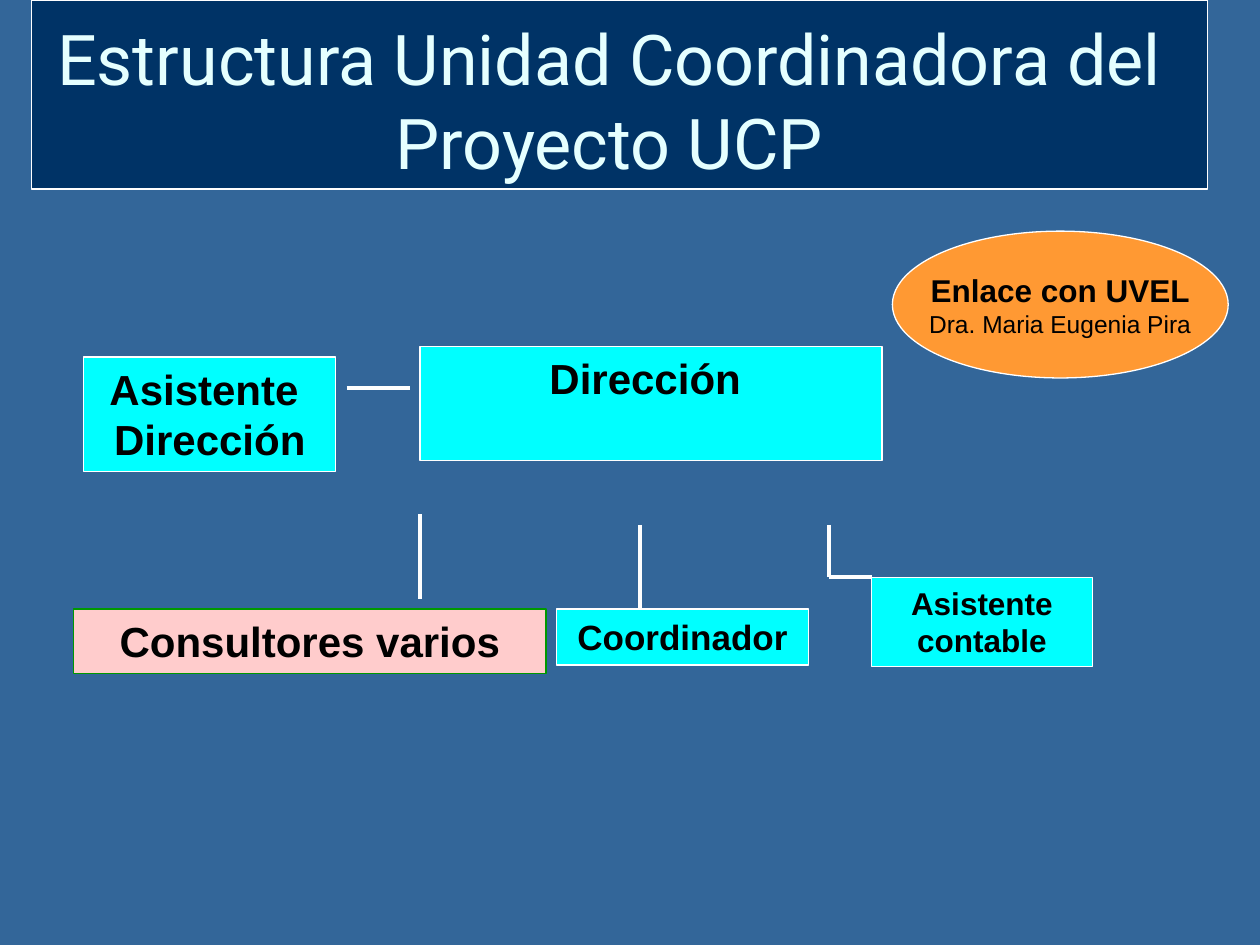
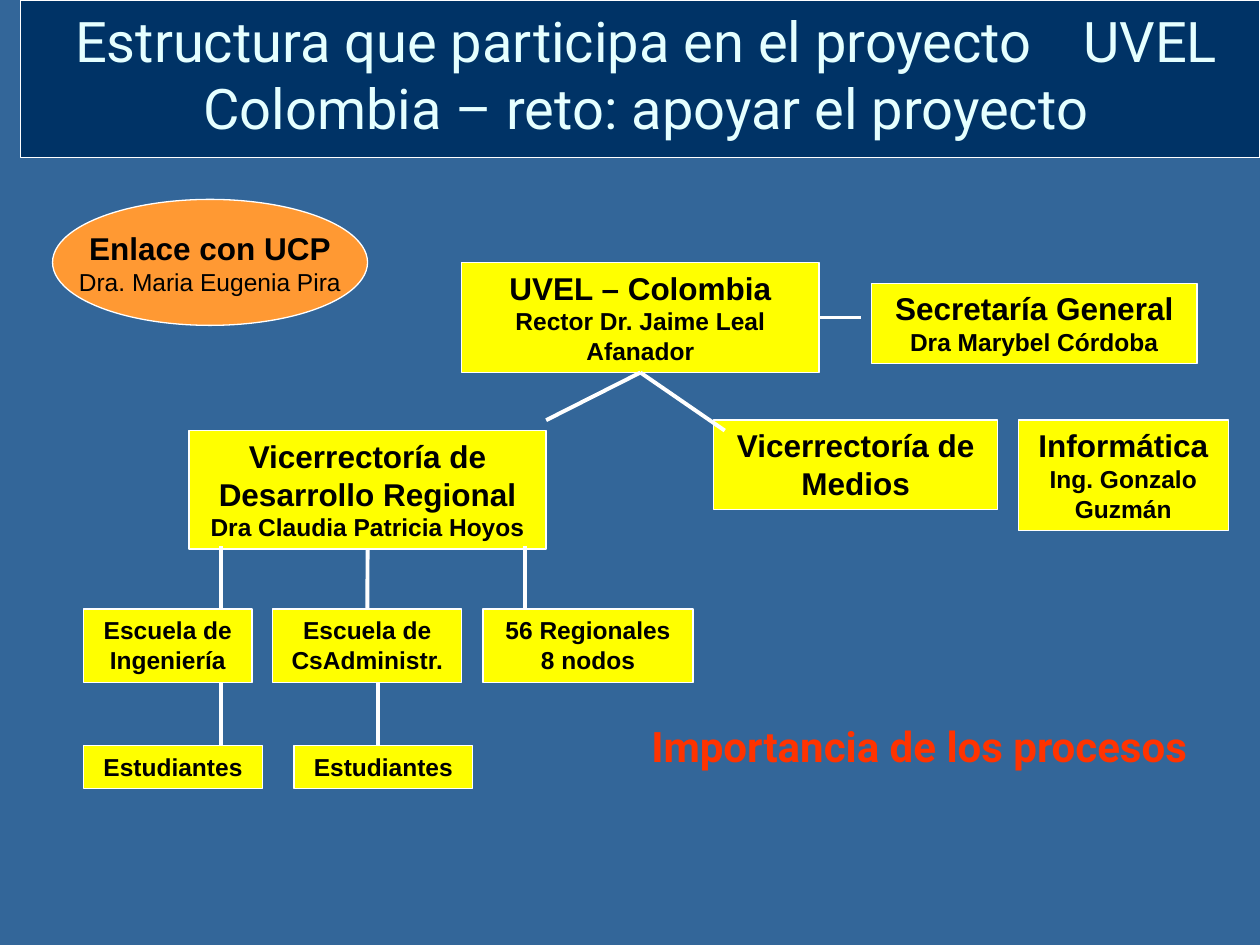
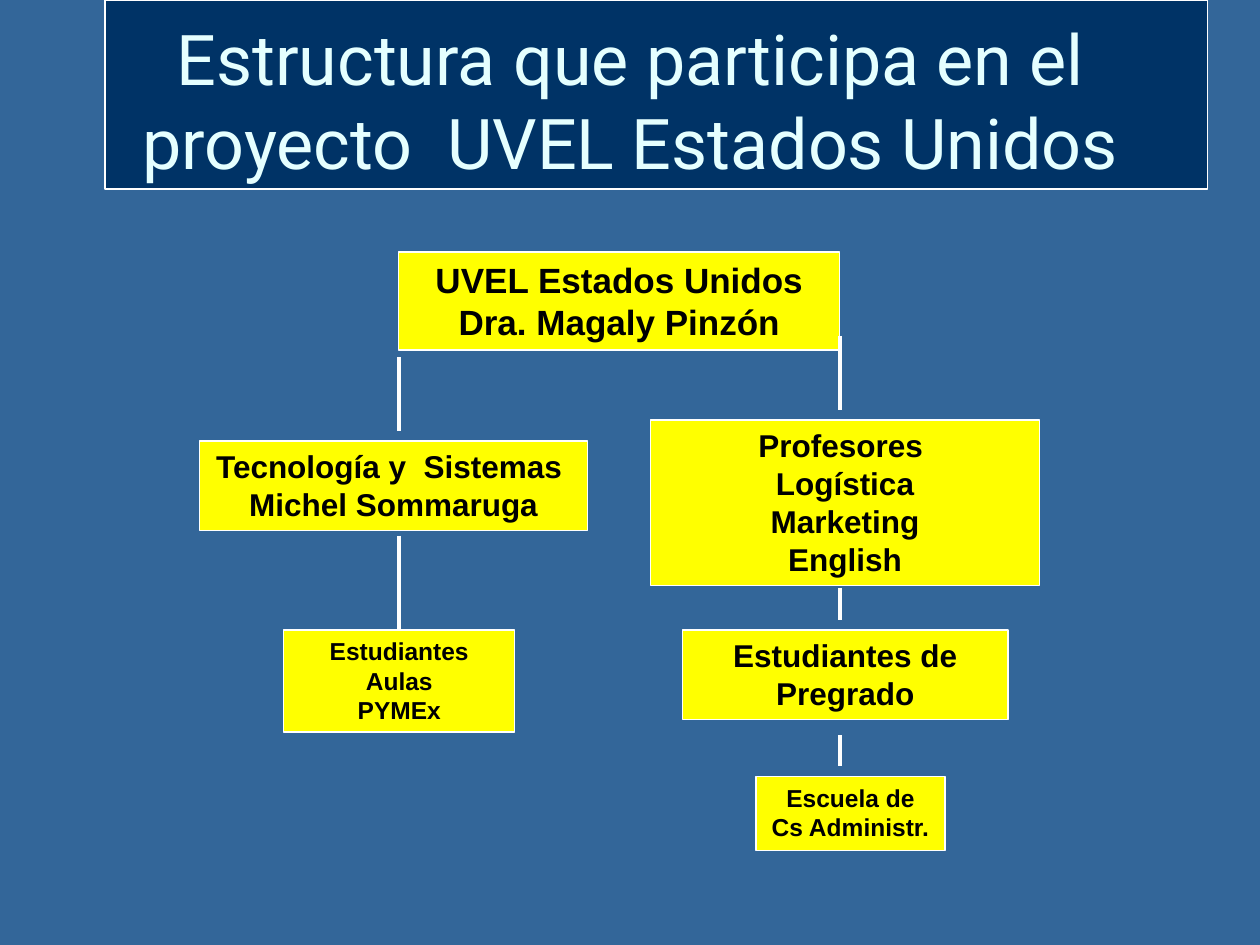
from lxml.etree import SubElement
from pptx import Presentation
from pptx.dml.color import RGBColor
from pptx.enum.shapes import MSO_CONNECTOR, MSO_SHAPE
from pptx.enum.text import MSO_ANCHOR, MSO_AUTO_SIZE, PP_ALIGN
from pptx.oxml.ns import qn
from pptx.util import Cm, Pt

BLUE = RGBColor(0x33, 0x66, 0x99)
NAVY = RGBColor(0x00, 0x33, 0x66)
ICE = RGBColor(0xE5, 0xFF, 0xFF)
WHITE = RGBColor(0xFF, 0xFF, 0xFF)
BLACK = RGBColor(0x00, 0x00, 0x00)
CYAN = RGBColor(0x00, 0xFF, 0xFF)
YELLOW = RGBColor(0xFF, 0xFF, 0x00)
ORANGE = RGBColor(0xFF, 0x99, 0x33)
PINK = RGBColor(0xFF, 0xCC, 0xCC)
GREEN = RGBColor(0x00, 0x99, 0x00)
RED = RGBColor(0xFF, 0x33, 0x00)
TITLE_FONT = "Roboto"
BODY_FONT = "Arial"
TOP, BOTTOM, RIGHT = 0, 2, 3


def add_block(slide, place, fill, heading="", size=18, detail="", kind=MSO_SHAPE.RECTANGLE):
    """Add a filled shape with a bold heading and, below it, a 14 pt detail line."""
    block = slide.shapes.add_shape(kind, *map(Cm, place))
    block.shadow.inherit = False
    block.fill.solid()
    block.fill.fore_color.rgb = fill
    block.line.color.rgb = WHITE
    block.line.width = Pt(0.75)
    is_oval = kind == MSO_SHAPE.OVAL
    frame = block.text_frame
    frame.word_wrap = not is_oval
    frame.vertical_anchor = MSO_ANCHOR.MIDDLE if is_oval else MSO_ANCHOR.TOP
    frame.text = f"{heading}\n{detail}" if detail else heading
    for paragraph in frame.paragraphs:
        paragraph.alignment = PP_ALIGN.CENTER
        for run in paragraph.runs:
            is_detail = run.text == detail
            run.font.name = BODY_FONT
            run.font.size = Pt(14 if is_detail else size)
            run.font.bold = not (is_detail and is_oval)
            run.font.color.rgb = BLACK
    return block


def add_link(slide, *ends):
    link = slide.shapes.add_connector(MSO_CONNECTOR.STRAIGHT, *map(Cm, ends))
    link.line.color.rgb = WHITE
    link.line.width = Pt(2.25)
    SubElement(link._element.spPr, qn("a:effectLst"))
    return link


presentation = Presentation()
presentation.slide_width = Cm(25.4)
presentation.slide_height = Cm(19.05)
background = presentation.slide_master.background.fill
background.solid()
background.fore_color.rgb = BLUE

# Titles: text, size, title place, band place
headers = [
    ("Estructura Unidad Coordinadora del Proyecto UCP", 40,
     (0, 0.64, 24.56, 2.74), (0.64, 0, 23.7, 3.81)),
    ("Estructura que participa en el proyecto\tUVEL Colombia – reto: apoyar el proyecto", 32,
     (0.64, 0.21, 24.77, 2.54), (0.42, 0, 24.98, 3.18)),
    ("Estructura que participa en el proyecto  UVEL Estados Unidos", 40,
     (0.64, 0.64, 24.13, 2.74), (2.12, 0, 22.23, 3.81)),
]
for text, size, title_place, band_place in headers:
    slide = presentation.slides.add_slide(presentation.slide_layouts[5])
    band = add_block(slide, band_place, NAVY)
    title = slide.shapes.title
    title._element.addprevious(band._element)
    title.left, title.top, title.width, title.height = map(Cm, title_place)
    title.text_frame.text = text
    title.text_frame.word_wrap = True
    title.text_frame.auto_size = MSO_AUTO_SIZE.NONE
    title.text_frame.vertical_anchor = MSO_ANCHOR.MIDDLE
    heading = title.text_frame.paragraphs[0]
    heading.alignment = PP_ALIGN.CENTER
    font = heading.runs[0].font
    font.name, font.size, font.color.rgb = TITLE_FONT, Pt(size), ICE

ucp, colombia, united_states = presentation.slides

# Coordinating unit
for place, text, size in [
    ((8.47, 6.98, 9.31, 2.31), "Dirección ", 24),
    ((11.22, 12.28, 5.08, 1.13), "Coordinador", 20),
    ((1.69, 7.2, 5.08, 2.31), "Asistente \nDirección", 24),
    ((17.57, 11.64, 4.45, 1.8), "Asistente contable", 18),
]:
    add_block(ucp, place, CYAN, text, size)
consultants = add_block(ucp, (1.48, 12.28, 9.53, 1.3), PINK, "Consultores varios", 24)
consultants.line.color.rgb = GREEN
add_block(ucp, (17.99, 4.66, 6.77, 2.96), ORANGE, "Enlace con UVEL",
          detail="Dra. Maria Eugenia Pira", kind=MSO_SHAPE.OVAL)
for ends in [
    (12.91, 10.58, 12.91, 12.28),
    (16.72, 10.58, 16.72, 11.64),
    (16.72, 11.64, 17.57, 11.64),
    (6.99, 7.83, 8.26, 7.83),
    (8.47, 10.37, 8.47, 12.07),
]:
    add_link(ucp, *ends)

# Colombia
rectorate = add_block(colombia, (9.31, 5.29, 7.2, 2.22), YELLOW, "UVEL – Colombia",
                      detail="Rector Dr. Jaime Leal Afanador")
regional = add_block(colombia, (3.81, 8.68, 7.2, 2.39), YELLOW,
                     "Vicerrectoría de Desarrollo Regional", detail="Dra Claudia Patricia Hoyos")
add_block(colombia, (17.57, 5.71, 6.56, 1.62), YELLOW, "Secretaría General",
          detail="Dra Marybel Córdoba")
add_block(colombia, (14.39, 8.47, 5.72, 1.8), YELLOW, "Vicerrectoría de Medios")
add_block(colombia, (20.53, 8.47, 4.23, 2.23), YELLOW, "Informática",
          detail="Ing. Gonzalo Guzmán")
add_block(colombia, (1.69, 12.28, 3.39, 1.48), YELLOW, "Escuela de Ingeniería", 14)
administration = add_block(colombia, (5.5, 12.28, 3.81, 1.48), YELLOW,
                           "Escuela de CsAdministr.", 14)
add_block(colombia, (9.74, 12.28, 4.23, 1.48), YELLOW, "56 Regionales\n8 nodos", 14)
for left in (1.69, 5.93):
    add_block(colombia, (left, 15.03, 3.6, 0.86), YELLOW, "Estudiantes", 14)
add_block(colombia, (1.06, 4.02, 6.35, 2.54), ORANGE, "Enlace con UCP",
          detail="Dra. Maria Eugenia Pira", kind=MSO_SHAPE.OVAL)

add_link(colombia, 16.51, 6.4, 17.36, 6.4).begin_connect(rectorate, RIGHT)
for end_x, end_y in [(11.01, 8.47), (14.61, 8.68)]:
    add_link(colombia, 12.91, 7.51, end_x, end_y).begin_connect(rectorate, BOTTOM)
for x in (4.45, 10.58):
    add_link(colombia, x, 11.01, x, 12.28)
school_link = add_link(colombia, 7.41, 11.07, 7.41, 12.28)
school_link.begin_connect(regional, BOTTOM)
school_link.end_connect(administration, TOP)
for x in (4.45, 7.62):
    add_link(colombia, x, 13.76, x, 15.03)

motto = colombia.shapes.add_textbox(Cm(12.88), Cm(14.39), Cm(12.52), Cm(1.27)).text_frame
motto.word_wrap = False
motto.text = "Importancia de los procesos"
font = motto.paragraphs[0].runs[0].font
font.name, font.size, font.bold, font.color.rgb = TITLE_FONT, Pt(24), True, RED

# United States
for place, text, size in [
    ((8.04, 5.08, 8.89, 1.98), "UVEL Estados Unidos\nDra. Magaly Pinzón", 20),
    ((4.02, 8.89, 7.83, 1.8), "Tecnología y  Sistemas \nMichel Sommaruga", 18),
    ((13.12, 8.47, 7.83, 3.33), "Profesores \nLogística\nMarketing\nEnglish", 18),
    ((13.76, 12.7, 6.56, 1.8), "Estudiantes de\nPregrado", 18),
    ((15.24, 15.66, 3.81, 1.48), "Escuela de Cs Administr.", 14),
]:
    add_block(united_states, place, YELLOW, text, size)
classrooms = add_block(united_states, (5.72, 12.7, 4.66, 2.06), YELLOW,
                       "Estudiantes\nAulas\nPYMEx", 14)
for x, start, end in [
    (8.04, 7.2, 8.68),
    (16.93, 6.77, 8.26),
    (16.93, 11.85, 12.49),
    (16.93, 14.82, 15.45),
]:
    add_link(united_states, x, start, x, end)
add_link(united_states, 8.05, 10.8, 8.05, 12.7).end_connect(classrooms, TOP)

presentation.save("out.pptx")
